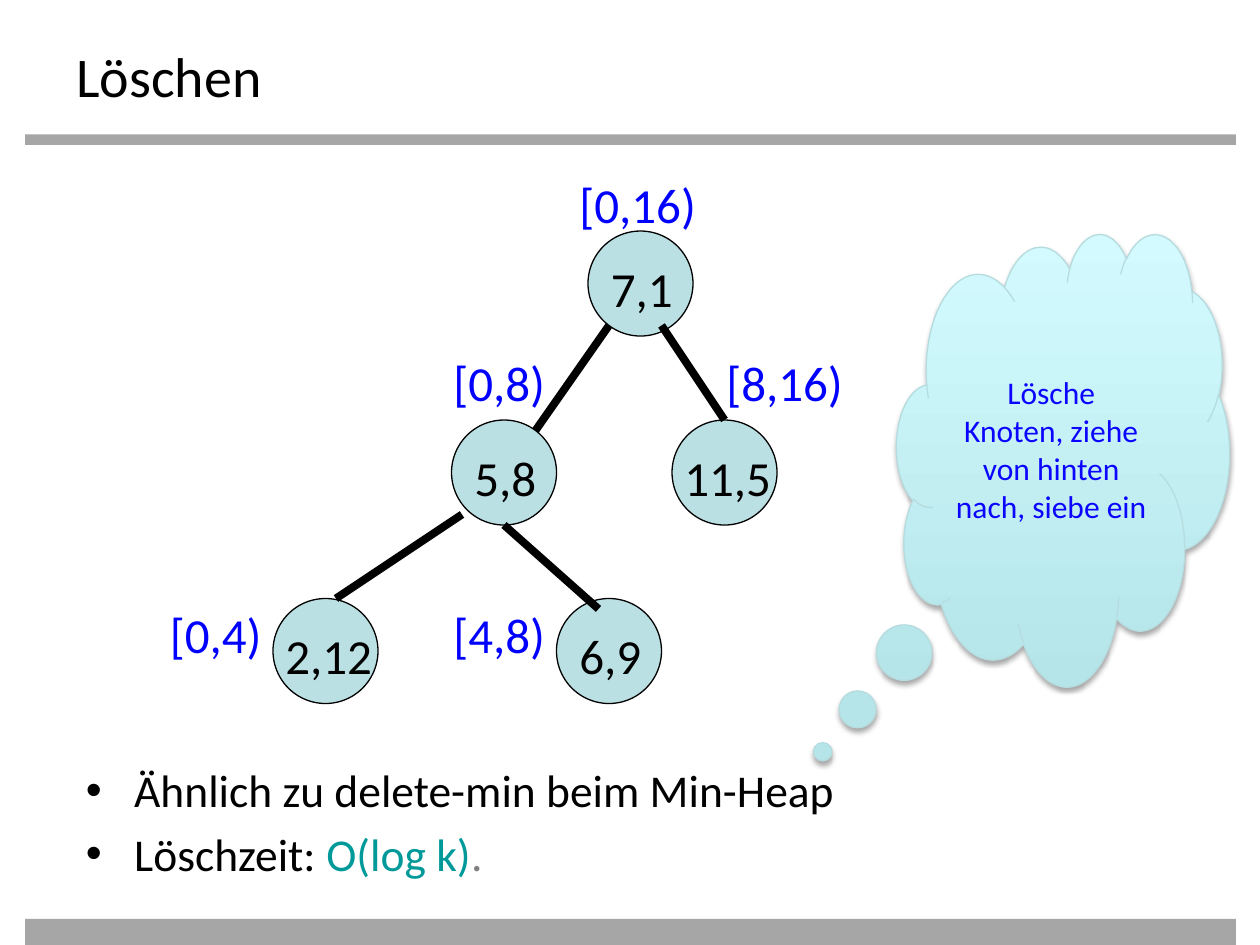
"""Build the slide on deleting from a heap of intervals."""
from lxml import etree
from pptx import Presentation
from pptx import util as u
from pptx.dml.color import RGBColor
from pptx.enum import shapes, text
from pptx.oxml.ns import qn

BLACK = RGBColor(0, 0, 0)
GREY = RGBColor(0xA6, 0xA6, 0xA6)
DOT = RGBColor(0x80, 0x80, 0x80)
BLUE = RGBColor(0, 0, 0xFF)
TEAL = RGBColor(0, 0x99, 0x99)
NODE = RGBColor(0xBB, 0xE0, 0xE3)
SKY = [RGBColor(0xB5, 0xE5, 0xE9), RGBColor(0xD3, 0xFB, 0xFF)]
RIM = RGBColor(0xB6, 0xDC, 0xDF)
INK = RGBColor(0x0B, 0x05, 0xFF)

PX = 7620
SIZE = 100
TITLE = "Löschen"
BARS = [(24, 128, 1153, 10), (24, 875, 1153, 25)]
NODES = [
    ("7,1", 560, 220, 10, 90),
    ("5,8", 430, 400, 10, 90),
    ("6,9", 530, 570, 10, 90),
    ("11,5", 640, 400, 0, 120),
    ("2,12", 260, 570, 0, 110),
]
RANGES = [
    ("[0,16)", 540, 160),
    ("[0,8)", 420, 330),
    ("[4,8)", 420, 570),
    ("[8,16)", 680, 330),
    ("[0,4)", 150, 570),
]
EDGES = [
    (580, 310, 510, 410),
    (480, 500, 570, 580),
    (630, 310, 690, 400),
    (440, 490, 320, 570),
]
POINTS = [
    [("Ähnlich zu delete-min beim Min-Heap", BLACK)],
    [("Löschzeit: ", BLACK), ("O(log k)", TEAL), (".", DOT)],
]
THOUGHT = "Lösche Knoten, ziehe von hinten nach, siebe ein"

deck = Presentation()
deck.slide_width, deck.slide_height = 1200 * PX, 900 * PX
slide = deck.slides.add_slide(deck.slide_layouts[6])


def emu(*px):
    return [n * PX for n in px]


def style(para, size, color):
    font = para.font
    font.name, font.size, font.color.rgb = "Calibri", u.Pt(size), color


def shape(kind, box, fill, line=None):
    item = slide.shapes.add_shape(kind, *emu(*box))
    item.shadow.inherit = False
    if fill:
        item.fill.solid()
        item.fill.fore_color.rgb = fill
    if line is None:
        item.line.fill.background()
    else:
        item.line.color.rgb = line
        item.line.width = u.Pt(0.75)
    return item


def label(words, box, size, color):
    frame = slide.shapes.add_textbox(*emu(*box)).text_frame
    frame.word_wrap = True
    frame.text = words
    style(frame.paragraphs[0], size, color)


def edge(ends):
    line = slide.shapes.add_connector(shapes.MSO_CONNECTOR.STRAIGHT, *emu(*ends))
    line.line.color.rgb = BLACK
    line.line.width = u.Pt(4.5)
    etree.SubElement(line._element.spPr, qn("a:effectLst"))


def points(box):
    frame = slide.shapes.add_textbox(*emu(*box)).text_frame
    frame.word_wrap = True
    for i, runs in enumerate(POINTS):
        para = frame.add_paragraph() if i else frame.paragraphs[0]
        props = para._p.get_or_add_pPr()
        props.set("marL", str(46 * PX))
        props.set("indent", str(-46 * PX))
        etree.SubElement(props, qn("a:buFont"), typeface="Arial")
        etree.SubElement(props, qn("a:buChar"), char="•")
        style(para, 26, BLACK)
        if i:
            para.space_before = u.Pt(5.2)
        for words, color in runs:
            run = para.add_run()
            run.text = words
            if color != BLACK:
                run.font.color.rgb = color


def cloud(box):
    item = shape(shapes.MSO_SHAPE.CLOUD_CALLOUT, box, None, RIM)
    item.adjustments[0], item.adjustments[1] = -0.722, 0.646
    item.fill.gradient()
    item.fill.gradient_angle = 90
    for stop, color, at in zip(item.fill.gradient_stops, SKY, (0, 1)):
        stop.color.rgb, stop.position = color, at
    glow = item._element.spPr.find(qn("a:effectLst"))
    shade = etree.SubElement(glow, qn("a:outerShdw"), blurRad="40000",
                             dist="23000", dir="5400000", rotWithShape="0")
    tint = etree.SubElement(shade, qn("a:srgbClr"), val="000000")
    etree.SubElement(tint, qn("a:alpha"), val="35000")
    frame = item.text_frame
    frame.word_wrap = True
    frame.vertical_anchor = text.MSO_ANCHOR.MIDDLE
    frame.text = THOUGHT
    para = frame.paragraphs[0]
    para.alignment = text.PP_ALIGN.CENTER
    style(para, 18, INK)


for bar in BARS:
    shape(shapes.MSO_SHAPE.RECTANGLE, bar, GREY)
label(TITLE, (61, 34, 1080, 66), 32, BLACK)
points((70, 720, 1020, 180))
for words, x, y, shift, wide in NODES:
    shape(shapes.MSO_SHAPE.OVAL, (x, y, SIZE, SIZE), NODE, BLACK)
    label(words, (x + shift, y + 20, wide, 68), 28, BLACK)
for words, x, y in RANGES:
    label(words, (x, y, 150, 68), 28, BLUE)
for ends in EDGES:
    edge(ends)
cloud((854, 222, 317, 431))
deck.save("out.pptx")
